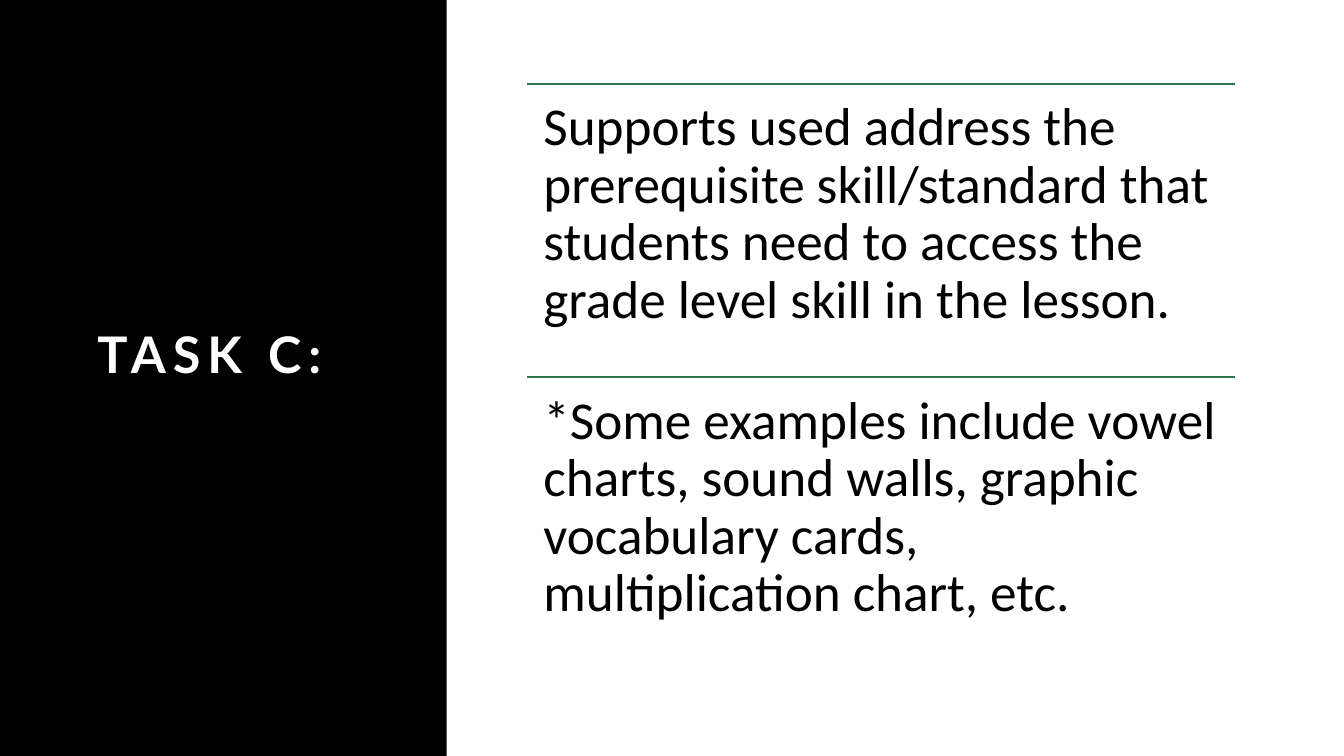
from pptx import Presentation
from pptx.dml.color import RGBColor
from pptx.enum import shapes, text
from pptx.oxml import ns
from pptx.util import Pt
from lxml import etree

TITLE = "TASK C: "
SUPPORTS = [
    "Supports used address the prerequisite skill/standard that students need to access the grade level skill in the lesson.",
    "*Some examples include vowel charts, sound walls, graphic vocabulary cards, multiplication chart, etc.",
]
BLACK, WHITE, GREEN = "000000", "FFFFFF", "2E744E"
PAGE_WIDTH, PAGE_HEIGHT = 960, 540
PANEL_WIDTH = 319
LIST_LEFT, LIST_TOP, LIST_WIDTH, ITEM_HEIGHT = 376.6, 59.8, 505.4, 209.5
ITEM_INSET = 11.5


def color(value):
    return RGBColor.from_string(value)


def set_font(para, name, size, value, bold=False):
    font = para.font
    font.name, font.size, font.bold = name, Pt(size), bold
    font.color.rgb = color(value)


def add_panel(page):
    panel = page.shapes.add_shape(
        shapes.MSO_SHAPE.RECTANGLE, 0, 0, Pt(PANEL_WIDTH), Pt(PAGE_HEIGHT))
    panel.shadow.inherit = False
    panel.fill.solid()
    panel.fill.fore_color.rgb = color(BLACK)
    panel.line.fill.background()
    tree = page.shapes.title.element.getparent()
    tree.insert(2, panel.element)


def add_title(page):
    title = page.shapes.title
    title.left, title.top, title.width, title.height = Pt(36), Pt(134), Pt(246), Pt(271.5)
    title.text_frame.vertical_anchor = text.MSO_ANCHOR.MIDDLE
    para = title.text_frame.paragraphs[0]
    para.alignment = text.PP_ALIGN.CENTER
    para.line_spacing = 1.2
    para.add_run().text = TITLE
    para.add_line_break()
    set_font(para, "Lato", 36, WHITE, bold=True)
    para._p.pPr.find(ns.qn("a:defRPr")).set("spc", "500")


def add_item(page, wording, top):
    rule = page.shapes.add_connector(
        shapes.MSO_CONNECTOR.STRAIGHT,
        Pt(LIST_LEFT), Pt(top), Pt(LIST_LEFT + LIST_WIDTH), Pt(top))
    rule.line.color.rgb = color(GREEN)
    rule.line.width = Pt(1.5)
    etree.SubElement(rule.element.spPr, ns.qn("a:effectLst"))

    box = page.shapes.add_textbox(
        Pt(LIST_LEFT), Pt(top), Pt(LIST_WIDTH), Pt(ITEM_HEIGHT))
    frame = box.text_frame
    frame.word_wrap = True
    frame.margin_left = frame.margin_right = Pt(ITEM_INSET)
    frame.margin_top = frame.margin_bottom = Pt(ITEM_INSET)
    para = frame.paragraphs[0]
    para.text = wording
    para.line_spacing = 0.9
    set_font(para, "Calibri", 38, BLACK)


def main():
    deck = Presentation()
    deck.slide_width, deck.slide_height = Pt(PAGE_WIDTH), Pt(PAGE_HEIGHT)
    page = deck.slides.add_slide(deck.slide_layouts.get_by_name("Title Only"))
    add_panel(page)
    add_title(page)
    for index, wording in enumerate(SUPPORTS):
        add_item(page, wording, LIST_TOP + index * ITEM_HEIGHT)
    deck.save("out.pptx")


if __name__ == "__main__":
    main()
